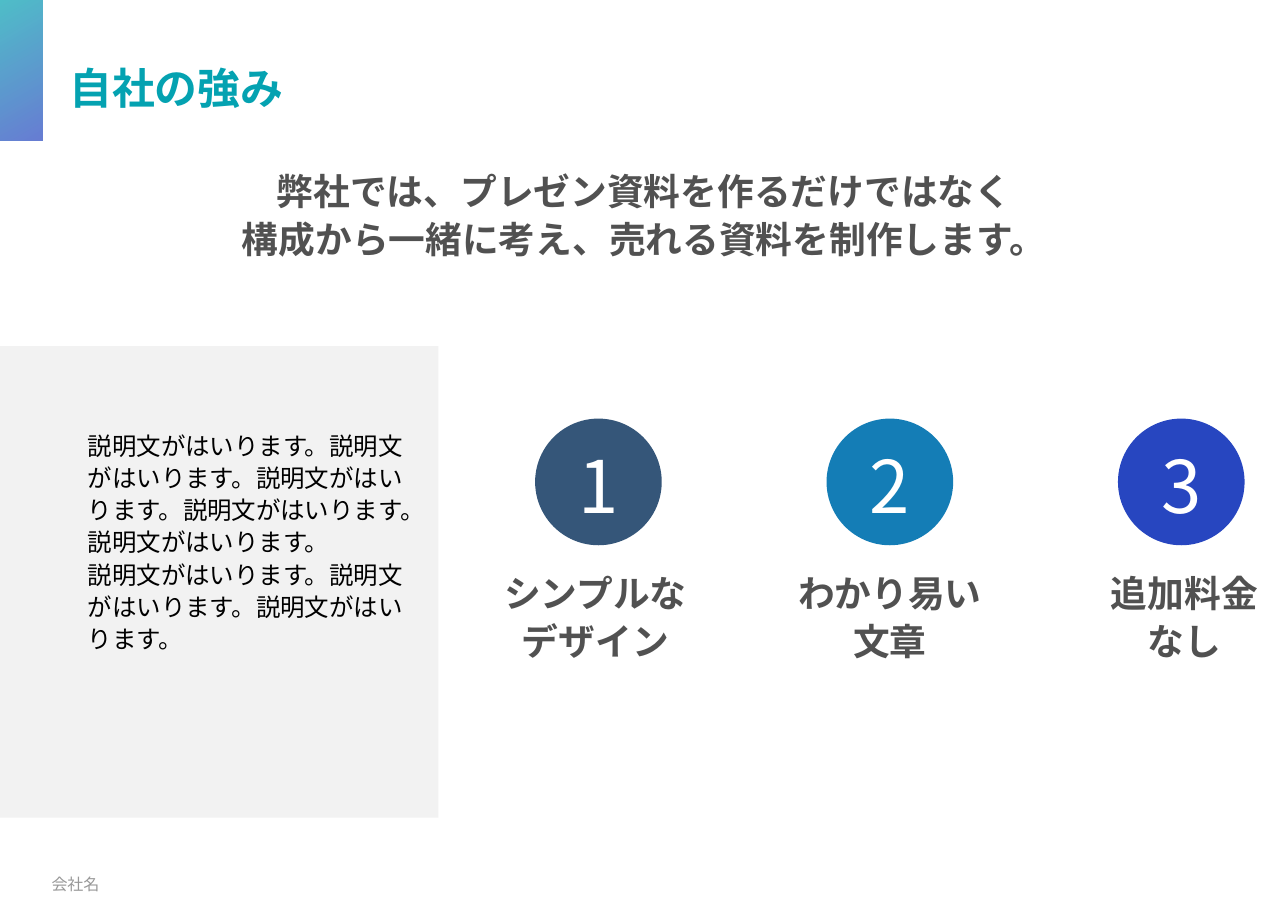
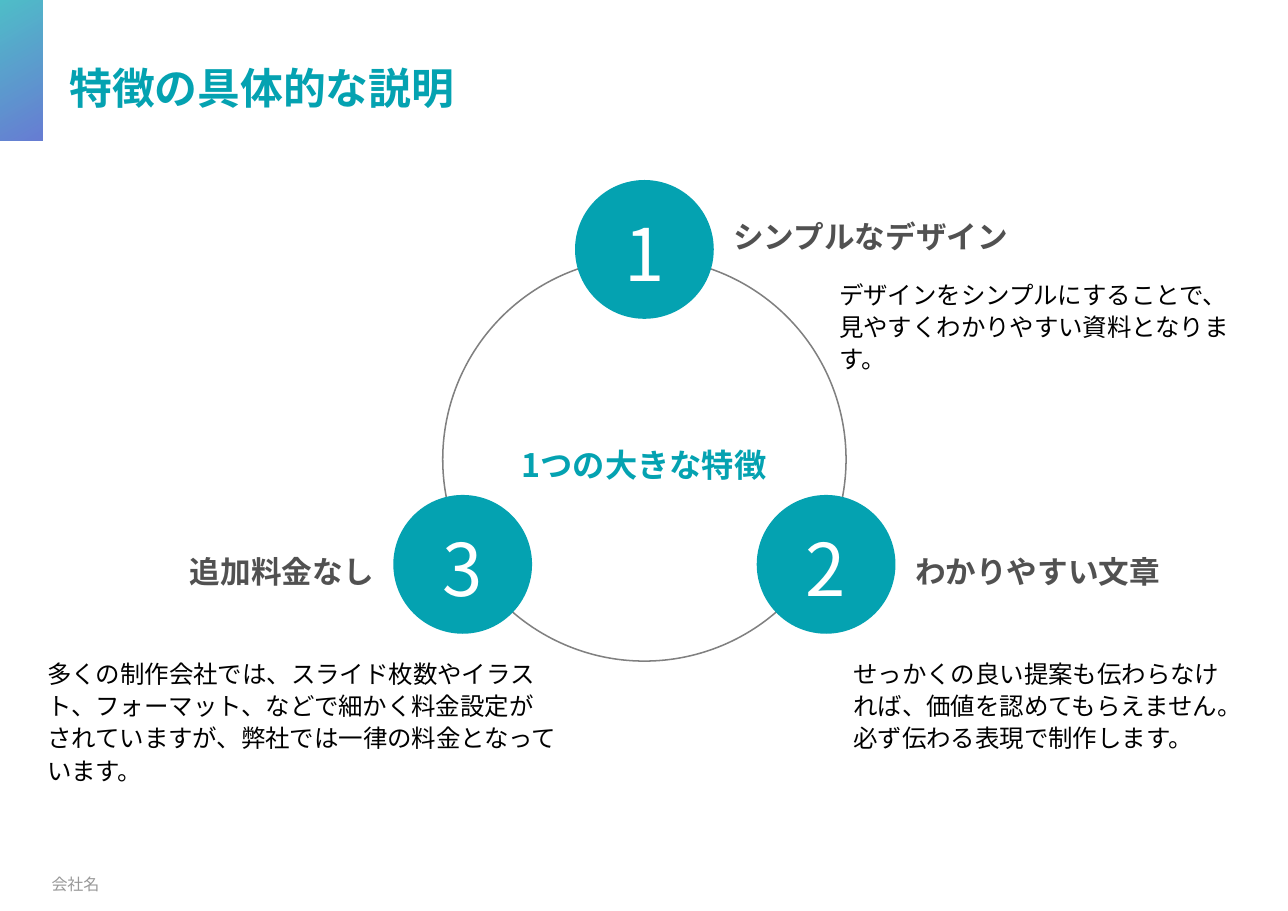
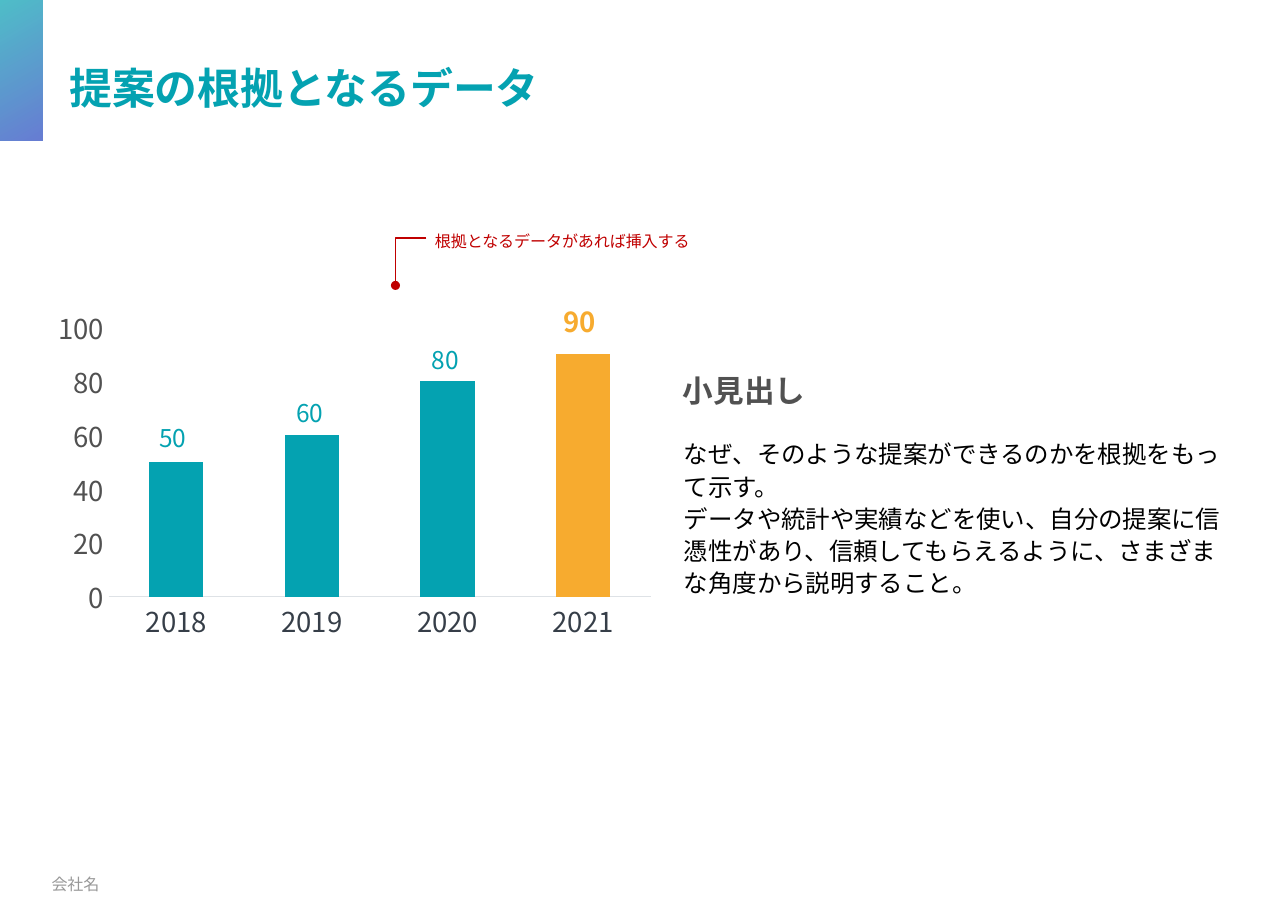
import math

import lxml.etree
import pptx
import pptx.chart.data
import pptx.dml.color
import pptx.enum.chart
import pptx.enum.shapes
import pptx.enum.text
import pptx.oxml.ns
import pptx.util

Cm = pptx.util.Cm
Pt = pptx.util.Pt
qn = pptx.oxml.ns.qn
ALIGN = pptx.enum.text.PP_ALIGN
ANCHOR = pptx.enum.text.MSO_ANCHOR
SHAPE = pptx.enum.shapes.MSO_SHAPE

FONT = "Noto Sans CJK JP"
COLORS = {
    "teal": "04A2B1", "royal": "2746C0", "navy": "355679", "blue": "147DB6",
    "orange": "F7AB2F", "red": "C00000", "black": "000000", "white": "FFFFFF",
    "heading": "515151", "axis": "363E48", "footer": "989898", "ring": "808080",
    "panel": "F2F2F2", "axis_line": "DEE2E6",
}
BODY_INSETS = (0.25, 0.18, 0.25, 0.13)
TIGHT_INSETS = (0.23, 0.1, 0.23, 0.1)
STYLES = {
    "title": {"size": 28, "color": "teal", "bold": True, "line": 1.1, "anchor": ANCHOR.MIDDLE},
    "lead": {"size": 24, "color": "heading", "bold": True, "line": 1.1, "align": ALIGN.CENTER},
    "label": {"size": 24, "color": "heading", "bold": True, "line": 1.1,
              "align": ALIGN.CENTER, "insets": TIGHT_INSETS},
    "body": {"size": 16, "line": 1.1, "insets": BODY_INSETS},
    "heading": {"size": 20, "color": "heading", "bold": True, "after": 5.3, "insets": BODY_INSETS},
    "subheading": {"size": 20, "color": "heading", "bold": True, "line": 0.9, "before": 10,
                   "insets": TIGHT_INSETS},
    "hub": {"size": 21.1, "color": "teal", "bold": True, "after": 5.3,
            "align": ALIGN.CENTER, "insets": BODY_INSETS},
    "number": {"size": 47.4, "color": "white", "align": ALIGN.CENTER, "anchor": ANCHOR.MIDDLE,
               "insets": (0.25, 0.13, 0.25, 0), "wrap": False, "grow": False},
    "footer": {"size": 10.5, "color": "footer", "font": "Calibri",
               "anchor": ANCHOR.MIDDLE, "grow": False},
    "callout": {"size": 10.5, "color": "red", "after": 5.3, "insets": BODY_INSETS, "grow": False},
    "value": {"size": 16, "color": "teal", "align": ALIGN.CENTER},
    "top_value": {"size": 18, "color": "orange", "bold": True, "align": ALIGN.CENTER},
}


def rgb(name):
    """Return the named colour."""
    return pptx.dml.color.RGBColor.from_string(COLORS[name])


def place(box):
    """Turn a box in centimetres into lengths."""
    return [Cm(round(value, 2)) for value in box]


def write(shape, lines, style_name, **changes):
    """Fill a shape with one paragraph per line in a named style."""
    style = {**STYLES[style_name], **changes}
    frame = shape.text_frame
    frame.word_wrap = style.get("wrap", True)
    sizes = pptx.enum.text.MSO_AUTO_SIZE
    frame.auto_size = sizes.SHAPE_TO_FIT_TEXT if style.get("grow", True) else sizes.NONE
    frame.vertical_anchor = style.get("anchor", ANCHOR.TOP)
    (frame.margin_left, frame.margin_top,
     frame.margin_right, frame.margin_bottom) = place(style.get("insets", (0.25, 0.13, 0.25, 0.13)))
    for index, line in enumerate(lines):
        paragraph = frame.add_paragraph() if index else frame.paragraphs[0]
        paragraph.alignment = style.get("align", ALIGN.LEFT)
        paragraph.line_spacing = style.get("line", 1.0)
        paragraph.space_before = Pt(style.get("before", 0))
        paragraph.space_after = Pt(style.get("after", 0))
        run = paragraph.add_run()
        run.text = line
        run.font.size = Pt(style["size"])
        run.font.bold = style.get("bold", False)
        run.font.color.rgb = rgb(style.get("color", "black"))
        run.font.name = style.get("font", FONT)
        properties = run.font._element
        properties.set("lang", "ja-JP")
        lxml.etree.SubElement(properties, qn("a:ea")).set("typeface", FONT)


def add_text(slide, box, lines, style_name, **changes):
    """Add a text box in a named style."""
    write(slide.shapes.add_textbox(*place(box)), lines, style_name, **changes)


def add_plain_shape(slide, kind, box, fill=None):
    """Add a preset shape without shadow or outline."""
    shape = slide.shapes.add_shape(kind, *place(box))
    shape.shadow.inherit = False
    shape.line.fill.background()
    if fill:
        shape.fill.solid()
        shape.fill.fore_color.rgb = rgb(fill)
    else:
        shape.fill.background()
    return shape


def add_badge(slide, center_x, center_y, diameter, number, fill):
    """Add a numbered disc around its centre."""
    box = (center_x - diameter / 2, center_y - diameter / 2, diameter, diameter)
    write(add_plain_shape(slide, SHAPE.OVAL, box, fill), [str(number)], "number")


def add_band(slide, box):
    """Add the translucent gradient band in the corner."""
    band = add_plain_shape(slide, SHAPE.RECTANGLE, box)
    band.fill.gradient()
    band.fill.gradient_angle = 300
    for stop, name in zip(band.fill.gradient_stops, ("teal", "royal")):
        stop.color.rgb = rgb(name)
    for color in band._element.spPr.iter(qn("a:srgbClr")):
        lxml.etree.SubElement(color, qn("a:alpha")).set("val", "70000")


def start_slide(presentation, title):
    """Add a blank slide with the shared band, title and footer."""
    slide = presentation.slides.add_slide(presentation.slide_layouts[6])
    add_band(slide, (0, 0, 0.99, 3.23))
    add_text(slide, (1.35, 1.19, 28.35, 1.53), [title], "title")
    add_text(slide, (0.94, 19.81, 8.76, 1.12), ["会社名"], "footer")
    return slide


def add_side_panel(slide, box, lines):
    """Add the grey panel with its description."""
    left, top, width, height = box
    add_plain_shape(slide, SHAPE.RECTANGLE, box, "panel")
    add_text(slide, (left + 1.78, top + 1.7, width - 2.16, height / 2), lines, "body")


def add_strengths(slide, box, strengths):
    """Add a row of numbered discs with labels below."""
    left, top, width, height = box
    diameter, label_width = 2.92, 4.9
    disc_pitch, label_pitch = 6.72, (width - label_width) / (len(strengths) - 1)
    for index, (fill, lines) in enumerate(strengths):
        add_badge(slide, left + 2.52 + index * disc_pitch, top + diameter / 2,
                  diameter, index + 1, fill)
        add_text(slide, (left + index * label_pitch, top + 3.3, label_width, height - 3.3),
                 lines, "label")


def add_ring(slide, box, hub):
    """Add the ring with its hub text and three numbered discs."""
    left, top, diameter, height = box
    center_x, center_y, orbit = left + diameter / 2, top + height / 2, 4.84
    ring = add_plain_shape(slide, SHAPE.OVAL, box)
    ring.line.color.rgb = rgb("ring")
    ring.line.width = Pt(1)
    for index in range(3):
        angle = math.radians(120 * index - 90)
        add_badge(slide, center_x + orbit * math.cos(angle), center_y + orbit * math.sin(angle),
                  3.2, index + 1, "teal")
    add_text(slide, (center_x - 3.74, center_y - 0.51, 7.47, 1.19), [hub], "hub")


def add_callout(slide, box, text):
    """Add a bent leader ending in a dot, with its note."""
    left, top, width, height = box
    corner_y = top + 0.33
    builder = slide.shapes.build_freeform(Cm(left + 0.71), Cm(corner_y))
    builder.add_line_segments(
        [(Cm(left), Cm(corner_y)), (Cm(left), Cm(top + height))], close=False)
    leader = builder.convert_to_shape()
    leader.shadow.inherit = False
    leader.fill.background()
    leader.line.color.rgb = rgb("red")
    leader.line.width = Pt(1)
    outline = leader._element.spPr.find(qn("a:ln"))
    lxml.etree.SubElement(outline, qn("a:tailEnd")).set("type", "oval")
    add_text(slide, (left + 0.66, top, width - 0.66, 0.89), [text], "callout")


def set_plot_area(chart, **fractions):
    """Fix the inner plot area as fractions of the chart."""
    plot_area = chart.element.find(".//" + qn("c:plotArea"))
    for old_layout in plot_area.findall(qn("c:layout")):
        plot_area.remove(old_layout)
    layout = lxml.etree.Element(qn("c:layout"))
    plot_area.insert(0, layout)
    manual = lxml.etree.SubElement(layout, qn("c:manualLayout"))
    settings = {"layoutTarget": "inner", "xMode": "edge", "yMode": "edge", **fractions}
    for name, value in settings.items():
        lxml.etree.SubElement(manual, qn("c:" + name)).set("val", str(value))


def add_column_chart(slide, box, categories, values):
    """Add the column chart with its last column highlighted."""
    data = pptx.chart.data.CategoryChartData()
    data.categories = categories
    data.add_series("Series 1", values)
    chart = slide.shapes.add_chart(
        pptx.enum.chart.XL_CHART_TYPE.COLUMN_STACKED, *place(box), data).chart
    chart.has_legend = False
    chart.has_title = False
    chart.font.name = "Manrope"
    chart.font.size = Pt(18)
    chart.font.color.rgb = rgb("heading")
    set_plot_area(chart, x=0.107, y=0.053, w=0.884, h=0.804)
    for axis, color in ((chart.category_axis, "axis"), (chart.value_axis, "heading")):
        axis.has_major_gridlines = False
        axis.major_tick_mark = pptx.enum.chart.XL_TICK_MARK.NONE
        axis.minor_tick_mark = pptx.enum.chart.XL_TICK_MARK.NONE
        axis.tick_labels.font.name = FONT
        axis.tick_labels.font.size = Pt(18)
        axis.tick_labels.font.color.rgb = rgb(color)
    chart.category_axis.format.line.color.rgb = rgb("axis_line")
    chart.category_axis.format.line.width = Pt(0.75)
    chart.value_axis.format.line.fill.background()
    chart.value_axis.minimum_scale = 0
    chart.value_axis.maximum_scale = 100
    chart.value_axis.major_unit = 20
    plot = chart.plots[0]
    plot.gap_width = 150
    plot.overlap = 100
    plot.vary_by_categories = False
    series = plot.series[0]
    highlight = series.points[len(values) - 1]
    for part, color in ((series, "teal"), (highlight, "orange")):
        part.format.fill.solid()
        part.format.fill.fore_color.rgb = rgb(color)


def add_values(slide, box, values, positions):
    """Add the value above each column at its centre and top."""
    left, top = box[:2]
    last = len(values) - 1
    for index, (value, (center_x, offset)) in enumerate(zip(values, positions)):
        add_text(slide, (left + center_x - 1.5, top + offset, 3, 0.94), [str(value)],
                 "top_value" if index == last else "value")


def build_strengths_slide(presentation):
    """Build the slide on the company's strengths."""
    slide = start_slide(presentation, "自社の強み")
    add_text(slide, (0, 3.66, 29.7, 1.37),
             ["弊社では、プレゼン資料を作るだけではなく",
              "構成から一緒に考え、売れる資料を制作します。"], "lead")
    sentence = "説明文がはいります。"
    add_side_panel(slide, (0, 7.98, 10.11, 10.87), [sentence * 5, sentence * 3])
    add_strengths(slide, (11.28, 9.65, 18.48, 5.74), [
        ("navy", ["シンプルな", "デザイン"]),
        ("blue", ["わかり易い", "文章"]),
        ("royal", ["追加料金", "なし"]),
    ])


def build_features_slide(presentation):
    """Build the slide that explains each feature."""
    slide = start_slide(presentation, "特徴の具体的な説明")
    add_ring(slide, (10.21, 5.94, 9.3, 9.3), "1つの大きな特徴")
    features = [
        ((16.66, 4.85), ALIGN.LEFT, "シンプルなデザイン", (19.1, 6.2, 9.73, 2.54),
         "デザインをシンプルにすることで、見やすくわかりやすい資料となります。"),
        ((20.85, 12.57), ALIGN.LEFT, "わかりやすい文章", (19.43, 14.94, 9.4, 2.54),
         "せっかくの良い提案も伝わらなければ、価値を認めてもらえません。必ず伝わる表現で制作します。"),
        ((1.4, 12.57), ALIGN.RIGHT, "追加料金なし", (0.84, 14.94, 12.27, 3.28),
         "多くの制作会社では、スライド枚数やイラスト、フォーマット、などで細かく料金設定が"
         "されていますが、弊社では一律の料金となっています。"),
    ]
    for corner, align, heading, body_box, body in features:
        add_text(slide, (*corner, 7.47, 1.17), [heading], "heading", align=align)
        add_text(slide, body_box, [body], "body")


def build_data_slide(presentation):
    """Build the slide with the supporting data."""
    slide = start_slide(presentation, "提案の根拠となるデータ")
    chart_box = (0.99, 7.09, 14.15, 7.77)
    values = (50, 60, 80, 90)
    add_callout(slide, (9.12, 5.16, 8.31, 1.42), "根拠となるデータがあれば挿入する")
    add_column_chart(slide, chart_box, ("2018", "2019", "2020", "2021"), values)
    add_values(slide, chart_box, values,
               ((2.99, 2.54), (6.15, 1.95), (9.28, 0.73), (12.37, -0.18)))
    add_text(slide, (15.52, 8.58, 10.69, 0.99), ["小見出し"], "subheading")
    add_text(slide, (15.52, 9.88, 13.31, 4.04),
             ["なぜ、そのような提案ができるのかを根拠をもって示す。",
              "データや統計や実績などを使い、自分の提案に信憑性があり、"
              "信頼してもらえるように、さまざまな角度から説明すること。"], "body")


def main():
    """Build and save the presentation."""
    presentation = pptx.Presentation()
    presentation.slide_width = Cm(29.7)
    presentation.slide_height = Cm(21)
    build_strengths_slide(presentation)
    build_features_slide(presentation)
    build_data_slide(presentation)
    presentation.save("out.pptx")


if __name__ == "__main__":
    main()
